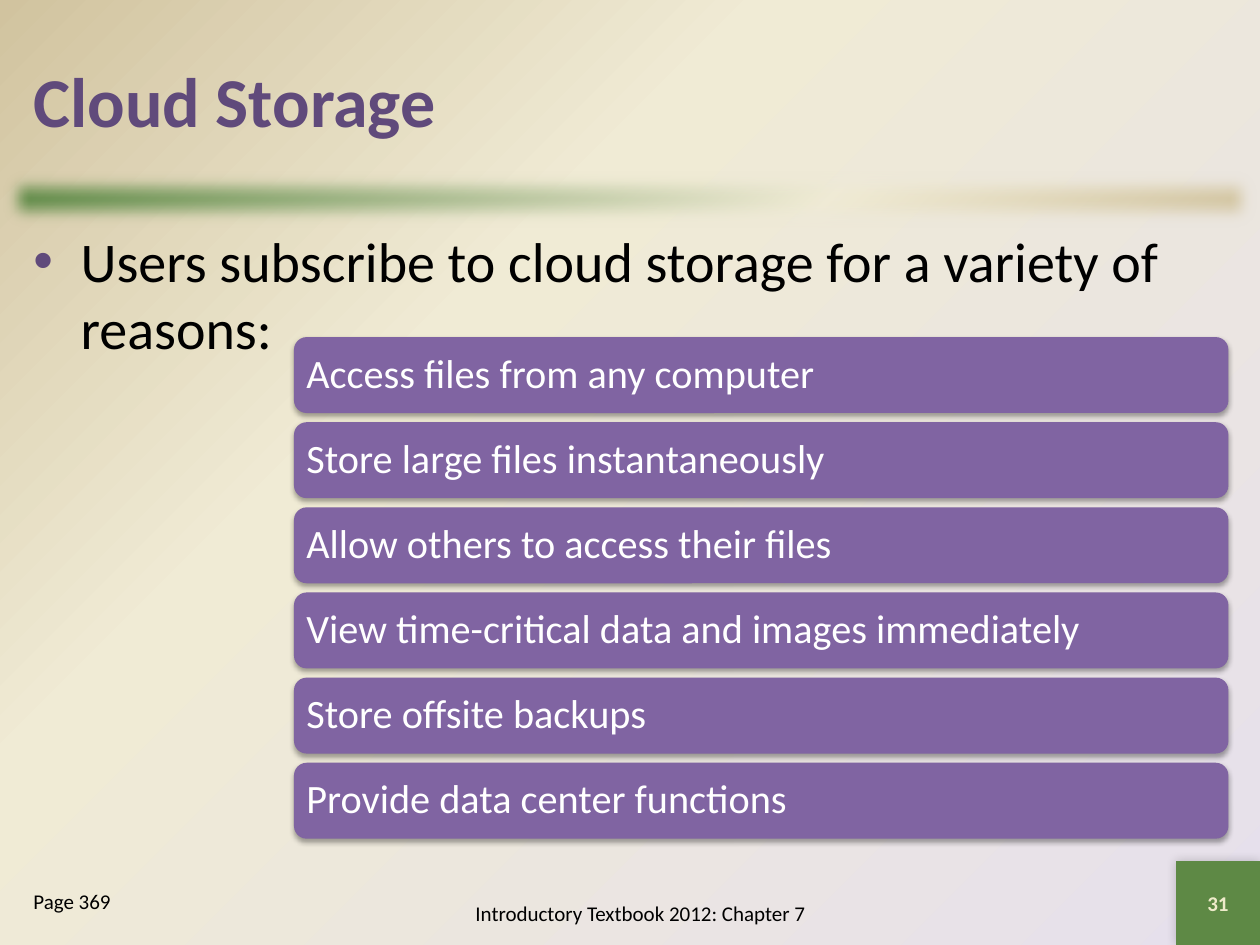
from pptx import Presentation, util as u
from pptx.dml.color import RGBColor
from pptx.enum import shapes, text
from pptx.oxml import parse_xml
from pptx.oxml.ns import nsdecls, qn

Pt = u.Pt
FONT = "Calibri"
HUES = {
    "violet": "604A7B", "card": "8064A2", "green": "5E8945", "lilac": "E6E0EC",
    "cream": "F0EBD5", "tan": "D1C39F", "pale": "EEEBCA",
    "white": "FFFFFF", "black": "000000",
}
MID, TOP = text.MSO_ANCHOR.MIDDLE, text.MSO_ANCHOR.TOP
LEFT, MIDST = text.PP_ALIGN.LEFT, text.PP_ALIGN.CENTER

LABELS = [
    ("Cloud Storage", (12, 12, 696, 90), 40, "violet", True, MID, LEFT),
    ("Users subscribe to cloud storage for a variety of reasons:",
     (12, 126, 696, 366), 32, "black", False, TOP, LEFT),
    ("Introductory Textbook 2012: Chapter 7",
     (216, 504, 300, 36), 12, "black", False, MID, MIDST),
    ("Page 369", (12, 504, 132, 36), 12, "black", False, TOP, LEFT),
]
REASONS = [
    "Access files from any computer",
    "Store large files instantaneously",
    "Allow others to access their files",
    "View time-critical data and images immediately",
    "Store offsite backups",
    "Provide data center functions",
]
CARD = (168, 192.6, 534, 43.4)
STEP = 48.65


def color(name):
    return RGBColor.from_string(HUES[name])


def write(shape, words, size, hue, bold=False, anchor=MID, align=LEFT):
    frame = shape.text_frame
    frame.word_wrap = True
    frame.vertical_anchor = anchor
    para = frame.paragraphs[0]
    para.alignment = align
    run = para.add_run()
    run.text = words
    font = run.font
    font.name, font.size, font.bold = FONT, Pt(size), bold
    font.color.rgb = color(hue)
    return para


def block(slide, kind, box, hue):
    shape = slide.shapes.add_shape(kind, *map(Pt, box))
    shape.shadow.inherit = False
    shape.fill.solid()
    shape.fill.fore_color.rgb = color(hue)
    shape.line.fill.background()
    return shape


def effect(shape, xml):
    shape.element.spPr.find(qn("a:effectLst")).append(parse_xml(xml))


def shade(shape, alpha, blur, dist, angle):
    effect(shape, f'<a:outerShdw {nsdecls("a")} blurRad="{Pt(blur)}" '
           f'dist="{Pt(dist)}" dir="{angle * 60000}" rotWithShape="0">'
           f'<a:srgbClr val="{HUES["black"]}"><a:alpha val="{alpha * 1000}"/>'
           '</a:srgbClr></a:outerShdw>')


def blend(host, first, course):
    stops = "".join(
        f'<a:gs pos="{pos * 1000}"><a:srgbClr val="{HUES[hue]}"/></a:gs>'
        for pos, hue in ((0, first), (65, "cream"), (100, "tan")))
    old = host.find(qn("a:solidFill"))
    host.replace(old, parse_xml(
        f'<a:gradFill {nsdecls("a")} rotWithShape="1">'
        f'<a:gsLst>{stops}</a:gsLst>{course}</a:gradFill>'))


def bullet(para, hue, indent):
    props = para._p.get_or_add_pPr()
    props.set("marL", str(Pt(indent)))
    props.set("indent", str(-Pt(indent)))
    for xml in (f'<a:buClr {nsdecls("a")}><a:srgbClr val="{HUES[hue]}"/></a:buClr>',
                f'<a:buFont {nsdecls("a")} typeface="Arial"/>',
                f'<a:buChar {nsdecls("a")} char="•"/>'):
        props.append(parse_xml(xml))


def main():
    deck = Presentation()
    deck.slide_width, deck.slide_height = Pt(720), Pt(540)
    slide = deck.slides.add_slide(deck.slide_layouts[6])
    rect = shapes.MSO_SHAPE.RECTANGLE

    slide.background.fill.solid()
    slide.background.fill.fore_color.rgb = color("cream")
    blend(slide.element.find(".//" + qn("p:bgPr")), "lilac",
          '<a:path path="circle"><a:fillToRect l="100000" t="100000"/></a:path>')

    rule = block(slide, rect, (0, 96, 720, 36), "green")
    blend(rule.element.spPr, "green", '<a:lin ang="2700000" scaled="0"/>')
    effect(rule, f'<a:softEdge {nsdecls("a")} rad="{Pt(10)}"/>')

    badge = block(slide, rect, (672, 492, 48, 48), "green")
    shade(badge, 20, 6, 0, 225)
    write(badge, "31", 12, "pale", True, MID, MIDST)

    for words, box, *style in LABELS:
        label = slide.shapes.add_textbox(*map(Pt, box))
        para = write(label, words, *style)
        if words.endswith(":"):
            bullet(para, "violet", 27)

    left, top, width, height = CARD
    for row, words in enumerate(REASONS):
        card = block(slide, shapes.MSO_SHAPE.ROUNDED_RECTANGLE,
                     (left, top + row * STEP, width, height), "card")
        shade(card, 35, 3.1, 1.8, 90)
        card.text_frame.margin_left = Pt(5)
        write(card, words, 23, "white").line_spacing = 0.9

    deck.save("out.pptx")


if __name__ == "__main__":
    main()
